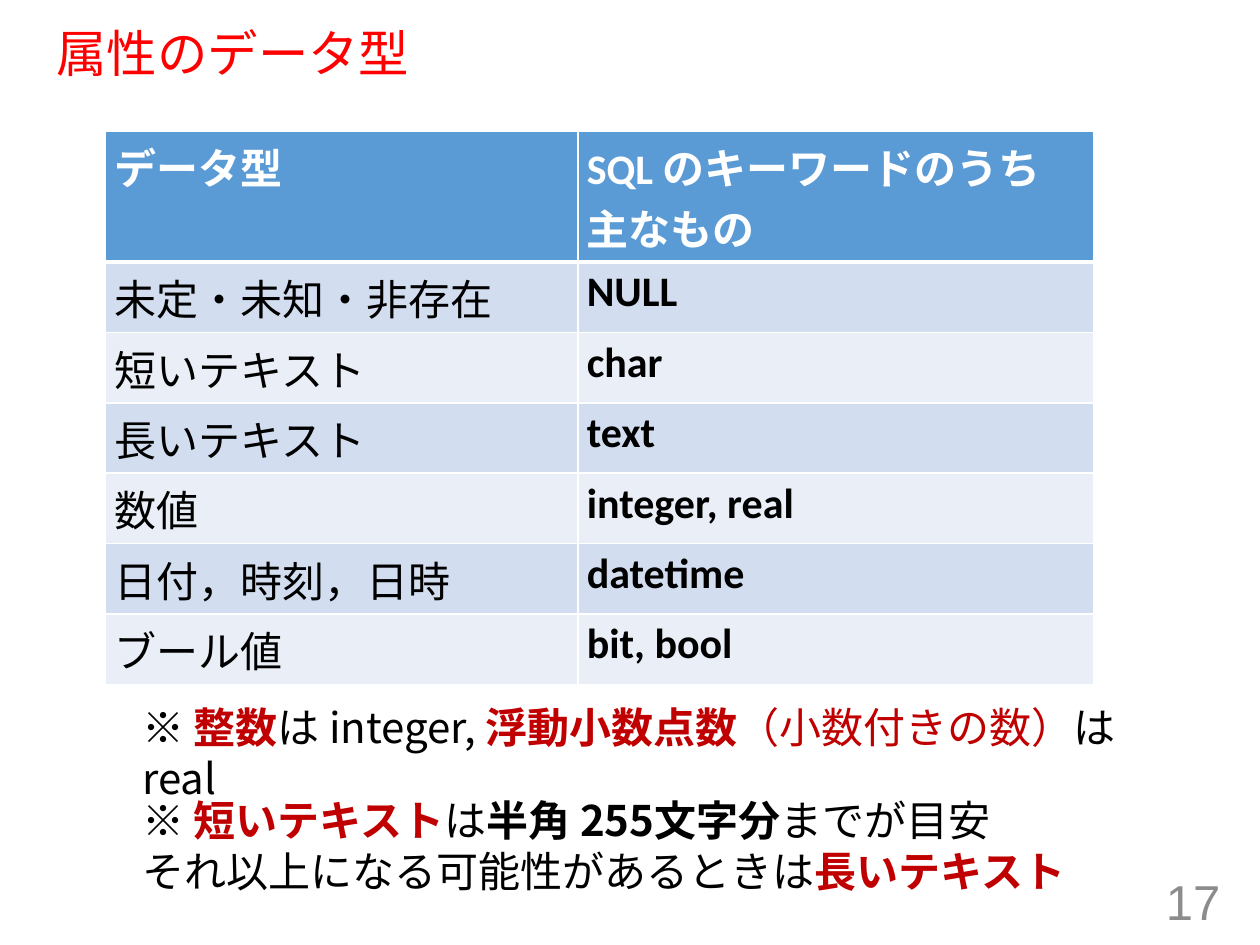
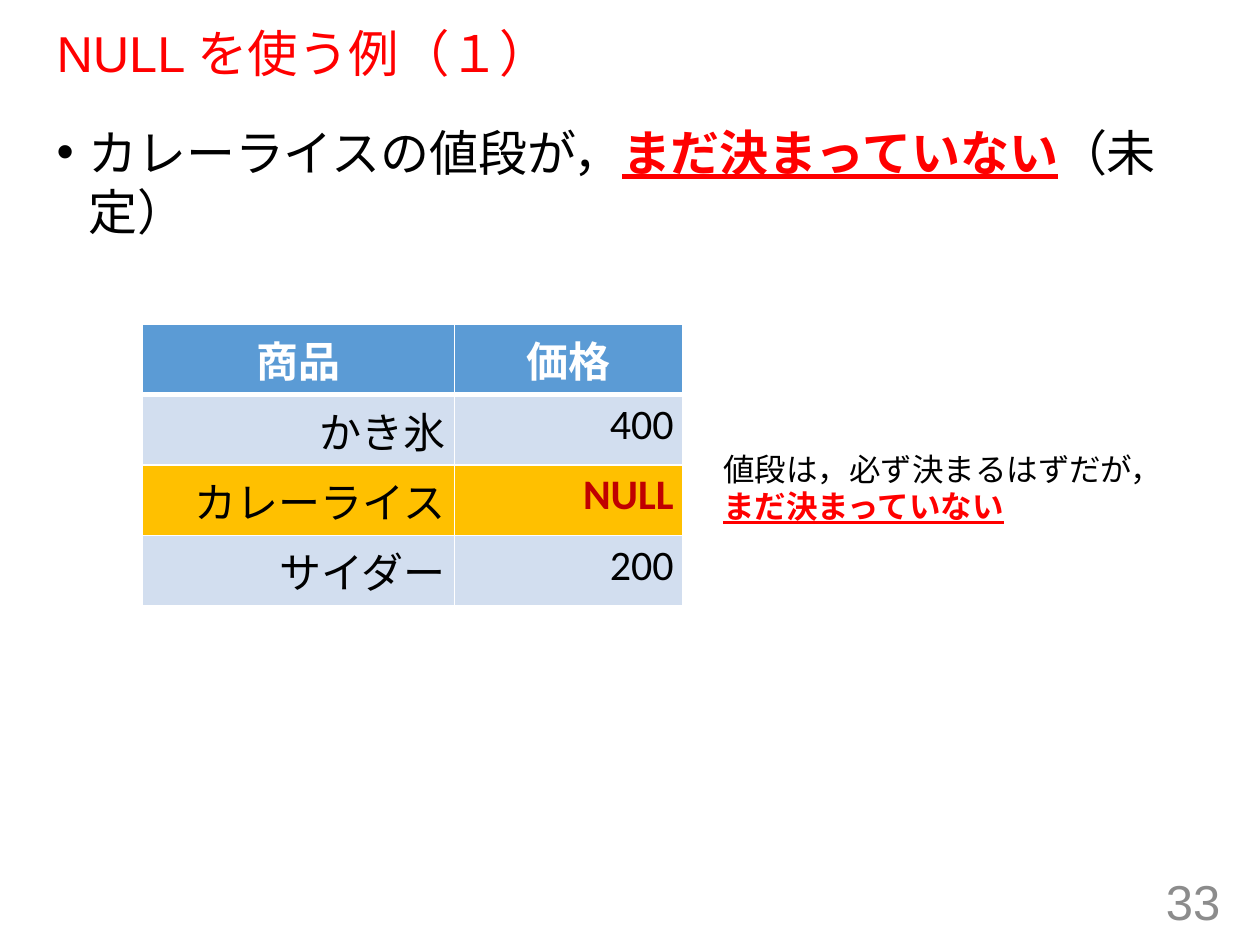
from dataclasses import dataclass

import pptx
import pptx.dml.color
import pptx.enum.lang
import pptx.enum.text
import pptx.oxml
import pptx.oxml.ns
import pptx.presentation
import pptx.shapes.autoshape
import pptx.slide
import pptx.table
import pptx.text.text
import pptx.util

Cm = pptx.util.Cm
Pt = pptx.util.Pt
ALIGN = pptx.enum.text.PP_ALIGN
ANCHOR = pptx.enum.text.MSO_ANCHOR

COLORS = {
    "title": "FF0000",
    "alert": "FF0000",
    "term": "C00000",
    "text": "000000",
    "number": "8C8C8C",
    "header_text": "FFFFFF",
    "rule": "FFFFFF",
    "header": "5B9BD5",
    "band_dark": "D2DEEF",
    "band_light": "EAEFF7",
    "highlight": "FFC000",
}
LATIN, HEADING, JAPANESE = "Calibri", "Arial", "Noto Sans CJK JP"
MARGIN_LEFT, CONTENT_WIDTH = 0.89, 23.5
ROW_HEIGHT, TALL_HEADER = 1.42, 2.64
NAMESPACE = pptx.oxml.ns.nsdecls("a")


@dataclass(frozen=True)
class Span:
    text: str
    color: str = "text"
    bold: bool = False
    underline: bool = False


@dataclass(frozen=True)
class Area:
    """Position and size in centimetres."""
    left: float
    top: float
    width: float
    height: float


@dataclass(frozen=True)
class Cell:
    lines: tuple[str, ...]
    fill: str
    color: str = "text"
    bold: bool = False
    font: str = LATIN
    align: ALIGN = ALIGN.LEFT


def rgb(name: str) -> pptx.dml.color.RGBColor:
    return pptx.dml.color.RGBColor.from_string(COLORS[name])


def add_span(para: pptx.text.text._Paragraph, text: str, *, size: float,
             font: str = LATIN, east_asian: str = LATIN, color: str = "text",
             bold: bool = False, underline: bool = False) -> None:
    span = para.add_run()
    span.text = text
    span.font.size = Pt(size)
    span.font.name = font
    span.font.bold = bold
    span.font.underline = underline
    span.font.color.rgb = rgb(color)
    span.font.language_id = pptx.enum.lang.MSO_LANGUAGE_ID.JAPANESE
    latin = span.font._element.find(pptx.oxml.ns.qn("a:latin"))
    latin.addnext(pptx.oxml.parse_xml(
        f'<a:ea {NAMESPACE} typeface="{east_asian}"/>'))


def add_text(page: pptx.slide.Slide, area: Area, lines: list[list[Span]], *,
             size: float, font: str = LATIN, east_asian: str = LATIN,
             align: ALIGN = ALIGN.LEFT, anchor: ANCHOR = ANCHOR.TOP,
             spacing: float = 1.0) -> pptx.shapes.autoshape.Shape:
    box = page.shapes.add_textbox(Cm(area.left), Cm(area.top),
                                  Cm(area.width), Cm(area.height))
    frame = box.text_frame
    frame.word_wrap = True
    frame.vertical_anchor = anchor
    for index, line in enumerate(lines):
        para = frame.add_paragraph() if index else frame.paragraphs[0]
        para.alignment = align
        para.line_spacing = spacing
        for span in line:
            add_span(para, span.text, size=size, font=font, east_asian=east_asian,
                     color=span.color, bold=span.bold, underline=span.underline)
    return box


def add_bullet(para: pptx.text.text._Paragraph, indent: float) -> None:
    properties = para._p.get_or_add_pPr()
    properties.set("marL", str(Cm(indent)))
    properties.set("indent", str(-Cm(indent)))
    for bullet in (f'<a:buFont {NAMESPACE} typeface="{HEADING}"/>',
                   f'<a:buChar {NAMESPACE} char="•"/>'):
        properties.append(pptx.oxml.parse_xml(bullet))


def add_border(cell: pptx.table._Cell, side: str, width: float) -> None:
    """Draw one side (lnL, lnR, lnT or lnB); call before the cell is filled."""
    cell._tc.get_or_add_tcPr().append(pptx.oxml.parse_xml(
        f'<a:{side} {NAMESPACE} w="{Pt(width)}"><a:solidFill>'
        f'<a:srgbClr val="{COLORS["rule"]}"/></a:solidFill></a:{side}>'))


def add_grid(page: pptx.slide.Slide, left: float, top: float,
             widths: list[float], heights: list[float],
             rows: list[list[Cell]]) -> None:
    table = page.shapes.add_table(len(rows), len(widths), Cm(left), Cm(top),
                                  Cm(sum(widths)), Cm(sum(heights))).table
    for column, width in zip(table.columns, widths):
        column.width = Cm(width)
    for row_index, (height, row) in enumerate(zip(heights, rows)):
        table.rows[row_index].height = Cm(height)
        for target, cell in zip(table.rows[row_index].cells, row):
            target.margin_left = target.margin_right = Cm(0.18)
            target.margin_top = target.margin_bottom = Cm(0.1)
            for side in ("lnL", "lnR"):
                add_border(target, side, 1)
            add_border(target, "lnT", 3 if row_index == 1 else 1)
            add_border(target, "lnB", 3 if row_index == 0 else 1)
            target.fill.solid()
            target.fill.fore_color.rgb = rgb(cell.fill)
            frame = target.text_frame
            for index, line in enumerate(cell.lines):
                para = frame.add_paragraph() if index else frame.paragraphs[0]
                para.alignment = cell.align
                add_span(para, line, size=24, font=cell.font, east_asian=JAPANESE,
                         color=cell.color, bold=cell.bold)


def header_cell(*lines: str, align: ALIGN = ALIGN.LEFT) -> Cell:
    return Cell(lines, "header", "header_text", True, align=align)


def add_page(deck: pptx.presentation.Presentation, title: str,
             number: int) -> pptx.slide.Slide:
    """Add a blank page with the shared title and page number."""
    page = deck.slides.add_slide(deck.slide_layouts[6])
    add_text(page, Area(MARGIN_LEFT, 0.48, CONTENT_WIDTH, 1.3),
             [[Span(title, "title")]], size=28.8, font=HEADING,
             anchor=ANCHOR.MIDDLE, spacing=0.9)
    add_text(page, Area(19.13, 17.65, 5.72, 1.02), [[Span(str(number), "number")]],
             size=28, font=HEADING, align=ALIGN.RIGHT, anchor=ANCHOR.MIDDLE)
    return page


def build_data_types(deck: pptx.presentation.Presentation) -> None:
    page = add_page(deck, "属性のデータ型", 17)
    data_types = [
        ("未定・未知・非存在", "NULL"),
        ("短いテキスト", "char"),
        ("長いテキスト", "text"),
        ("数値", "integer, real"),
        ("日付，時刻，日時", "datetime"),
        ("ブール値", "bit, bool"),
    ]
    rows = [[header_cell("データ型"),
             header_cell("SQL のキーワードのうち", "主なもの")]]
    for index, (meaning, keyword) in enumerate(data_types):
        fill = "band_light" if index % 2 else "band_dark"
        rows.append([Cell((meaning,), fill, font=JAPANESE),
                     Cell((keyword,), fill, bold=True)])
    add_grid(page, 2.13, 2.64, [9.52, 10.4],
             [TALL_HEADER] + [ROW_HEIGHT] * len(data_types), rows)

    number_note = [[
        Span("※ "), Span("整数", "term", True), Span("は integer, "),
        Span("浮動小数点数", "term", True), Span("（小数付きの数）", "term"),
        Span("は real"),
    ]]
    text_note = [
        [Span("※ "), Span("短いテキスト", "term", True), Span("は"),
         Span("半角 255文字分", bold=True), Span("までが目安")],
        [Span("それ以上になる可能性があるときは"),
         Span("長いテキスト", "term", True)],
    ]
    for top, width, note in ((14.02, 20.17, number_note), (15.9, 19.33, text_note)):
        add_text(page, Area(2.62, top, width, 2.31), note, size=24,
                 font=JAPANESE, east_asian=JAPANESE)


def build_null_example(deck: pptx.presentation.Presentation) -> None:
    page = add_page(deck, "NULL を使う例（１）", 33)
    undecided = Span("まだ決まっていない", "alert", True, True)
    body = add_text(page, Area(MARGIN_LEFT, 2.34, CONTENT_WIDTH, 14.81),
                    [[Span("カレーライスの値段が，"), undecided, Span("（未定）")]],
                    size=28, font=HEADING)
    add_bullet(body.text_frame.paragraphs[0], 0.64)

    rows = [[header_cell(name, align=ALIGN.CENTER) for name in ("商品", "価格")]]
    for product, price in (("かき氷", "400"), ("カレーライス", "NULL"), ("サイダー", "200")):
        missing = price == "NULL"
        fill = "highlight" if missing else "band_dark"
        rows.append([Cell((product,), fill, align=ALIGN.RIGHT),
                     Cell((price,), fill, "term" if missing else "text", missing,
                          align=ALIGN.RIGHT)])
    add_grid(page, 2.86, 6.53, [6.3, 4.6], [ROW_HEIGHT] * len(rows), rows)
    add_text(page, Area(14.33, 8.94, 9.5, 1.8),
             [[Span("値段は，必ず決まるはずだが，")], [undecided]], size=18)


def main() -> None:
    deck = pptx.Presentation()
    deck.slide_width, deck.slide_height = Cm(25.4), Cm(19.05)
    build_data_types(deck)
    build_null_example(deck)
    deck.save("out.pptx")


if __name__ == "__main__":
    main()
